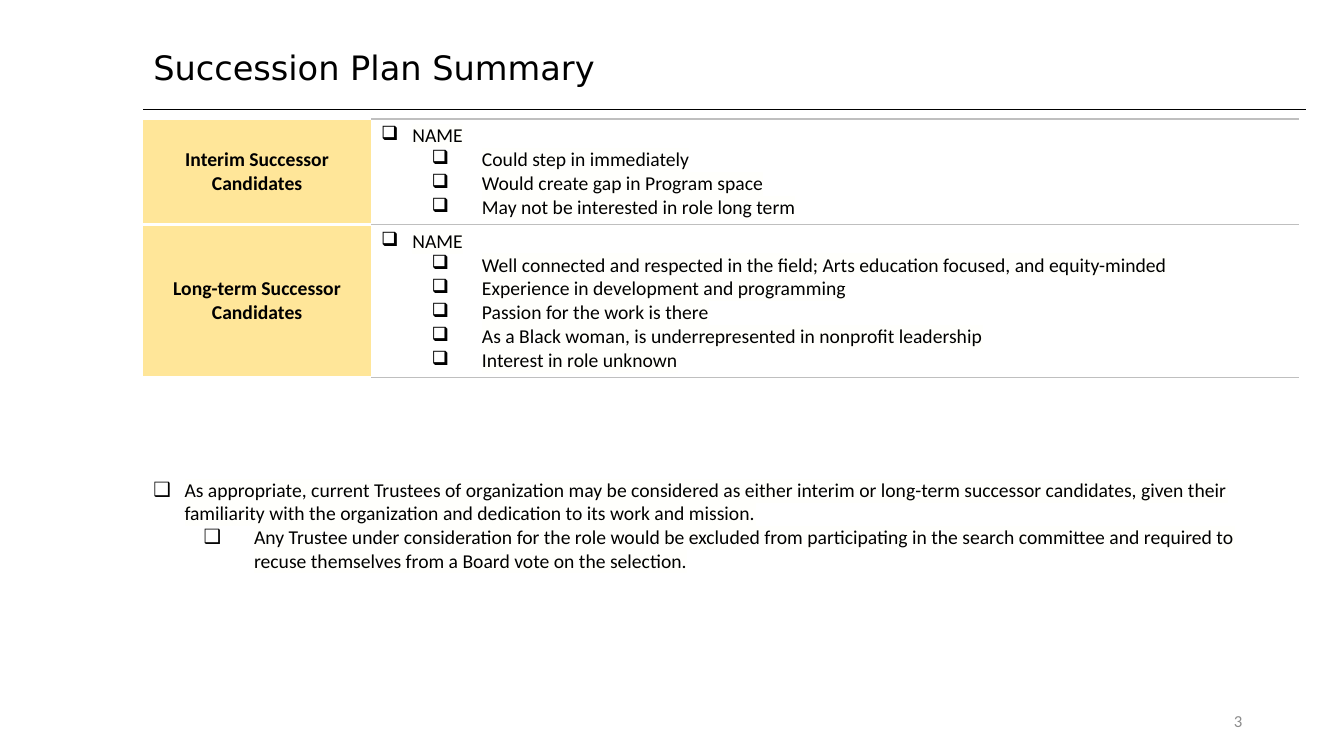
from lxml import etree
from pptx import Presentation
from pptx import util as u
from pptx.dml.color import RGBColor
from pptx.enum import shapes, text
from pptx.oxml.ns import qn

COLORS = {
    "ink": "000000",
    "label": "FFE699",
    "rule": "BFBFBF",
    "paper": "FFFFFF",
    "highlight": "FFFFFC",
    "number": "8C8C8C",
}
LEFT = 1.42
TABLE_TOP = 1.18
COLUMN_WIDTHS = (2.26, 9.2)
ROW_HEIGHTS = (1.04, 1.52)
BULLET = "❑"
INDENTS = ((0.31, -0.31), (1, -0.5))  # left margin and first line, per level

# Each list is one lead line followed by second-level points
CANDIDATES = [
    ("Interim Successor Candidates", [
        "NAME",
        "Could step in immediately",
        "Would create gap in Program space",
        "May not be interested in role long term",
    ]),
    ("Long-term Successor Candidates", [
        "NAME",
        "Well connected and respected in the field; Arts education focused, and equity-minded",
        "Experience in development and programming",
        "Passion for the work is there",
        "As a Black woman, is underrepresented in nonprofit leadership",
        "Interest in role unknown",
    ]),
]
TRUSTEE_NOTES = [
    "As appropriate, current Trustees of organization may be considered as either interim or "
    "long-term successor candidates, given their familiarity with the organization and "
    "dedication to its work and mission.",
    "Any Trustee under consideration for the role would be excluded from participating in the "
    "search committee and required to recuse themselves from a Board vote on the selection.",
]


def apply(target, values):
    for name, value in values.items():
        setattr(target, name, value)


def add_color(parent, tag, color):
    holder = etree.SubElement(parent, qn(tag))
    etree.SubElement(holder, qn("a:srgbClr"), val=COLORS[color])


class SlideBuilder:
    font = {"name": "Calibri", "size": u.Pt(14), "bold": False}
    spacing = {"space_before": u.Pt(0), "space_after": u.Pt(0), "line_spacing": 1.0}

    def __init__(self, page):
        self.page = page

    def place(self, shape, *bounds):
        apply(shape, dict(zip(("left", "top", "width", "height"), map(u.Inches, bounds))))

    def add_words(self, para, words, color="ink", highlight=None, layout=None, **font):
        apply(para, self.spacing | (layout or {}))
        span = para.add_run()
        span.text = words
        span.font.color.rgb = RGBColor.from_string(COLORS[color])
        if highlight:
            add_color(span.font._element, "a:highlight", highlight)
        apply(span.font, self.font | font)

    def bullets(self, frame, lines):
        for index, line in enumerate(lines):
            para = frame.add_paragraph() if index else frame.paragraphs[0]
            para.level = min(index, 1)
            self.add_words(para, line, highlight="highlight",
                           layout={"alignment": text.PP_ALIGN.LEFT})
            props = para._p.get_or_add_pPr()
            margin, first = INDENTS[para.level]
            props.set("marL", str(u.Inches(margin)))
            props.set("indent", str(u.Inches(first)))
            add_color(props, "a:buClr", "ink")
            etree.SubElement(props, qn("a:buChar"), char=BULLET)

    def title(self, words):
        box = self.page.shapes.title
        self.place(box, LEFT, 0.16, 10.37, 0.81)
        apply(box.text_frame, {"vertical_anchor": text.MSO_ANCHOR.MIDDLE, "word_wrap": True,
                               "auto_size": text.MSO_AUTO_SIZE.NONE})
        self.add_words(box.text_frame.paragraphs[0], words, name="DejaVu Sans", size=u.Pt(24),
                       layout={"alignment": text.PP_ALIGN.LEFT, "line_spacing": 1.5,
                               "space_before": u.Pt(12)})

    def rule(self, start, end, top):
        line = self.page.shapes.add_connector(
            shapes.MSO_CONNECTOR.STRAIGHT, *map(u.Inches, (start, top, end, top)))
        line.line.color.rgb = RGBColor.from_string(COLORS["ink"])
        line.line.width = u.Pt(0.5)
        etree.SubElement(line._element.spPr, qn("a:effectLst"))

    def borders(self, cell, color, width):
        props = cell._tc.get_or_add_tcPr()
        for side in ("L", "R"):
            etree.SubElement(etree.SubElement(props, qn(f"a:ln{side}")), qn("a:noFill"))
        for side in ("T", "B"):
            edge = etree.SubElement(props, qn(f"a:ln{side}"), w=str(u.Pt(width)))
            add_color(edge, "a:solidFill", color)

    def table(self, rows):
        bounds = (LEFT, TABLE_TOP, sum(COLUMN_WIDTHS), sum(ROW_HEIGHTS))
        grid = self.page.shapes.add_table(len(rows), 2, *map(u.Inches, bounds)).table
        apply(grid, {"first_row": False, "horz_banding": False})
        for column, width in zip(grid.columns, COLUMN_WIDTHS):
            column.width = u.Inches(width)
        for row, height, (label, points) in zip(grid.rows, ROW_HEIGHTS, rows):
            row.height = u.Inches(height)
            label_cell, list_cell = row.cells
            for cell in row.cells:
                cell.vertical_anchor = text.MSO_ANCHOR.MIDDLE
            # Label cell
            self.borders(label_cell, "paper", 2.25)
            label_cell.fill.solid()
            label_cell.fill.fore_color.rgb = RGBColor.from_string(COLORS["label"])
            self.add_words(label_cell.text_frame.paragraphs[0], label, bold=True,
                           layout={"alignment": text.PP_ALIGN.CENTER,
                                   "space_before": u.Pt(3), "space_after": u.Pt(3)})
            # List cell
            self.borders(list_cell, "rule", 1)
            list_cell.fill.background()
            self.bullets(list_cell.text_frame, points)

    def body(self, lines):
        box = self.page.placeholders[1]
        self.place(box, LEFT, 4.69, 11.46, 1.35)
        apply(box.text_frame, {"vertical_anchor": text.MSO_ANCHOR.TOP, "word_wrap": True,
                               "auto_size": text.MSO_AUTO_SIZE.NONE})
        self.bullets(box.text_frame, lines)

    def page_number(self, number):
        box = self.page.shapes.add_textbox(*map(u.Inches, (9.42, 6.95, 3, 0.4)))
        apply(box.text_frame, {"vertical_anchor": text.MSO_ANCHOR.MIDDLE, "word_wrap": True})
        self.add_words(box.text_frame.paragraphs[0], number, color="number", size=u.Pt(12),
                       layout={"alignment": text.PP_ALIGN.RIGHT})


def main():
    deck = Presentation()
    apply(deck, {"slide_width": u.Inches(13.33), "slide_height": u.Inches(7.5)})
    slide = SlideBuilder(deck.slides.add_slide(deck.slide_layouts[1]))
    # Heading
    slide.rule(LEFT, 12.95, 1.09)
    slide.title("Succession Plan Summary")
    # Candidates and trustee notes
    slide.table(CANDIDATES)
    slide.body(TRUSTEE_NOTES)
    # Footer
    slide.page_number("3")
    deck.save("out.pptx")


if __name__ == "__main__":
    main()
